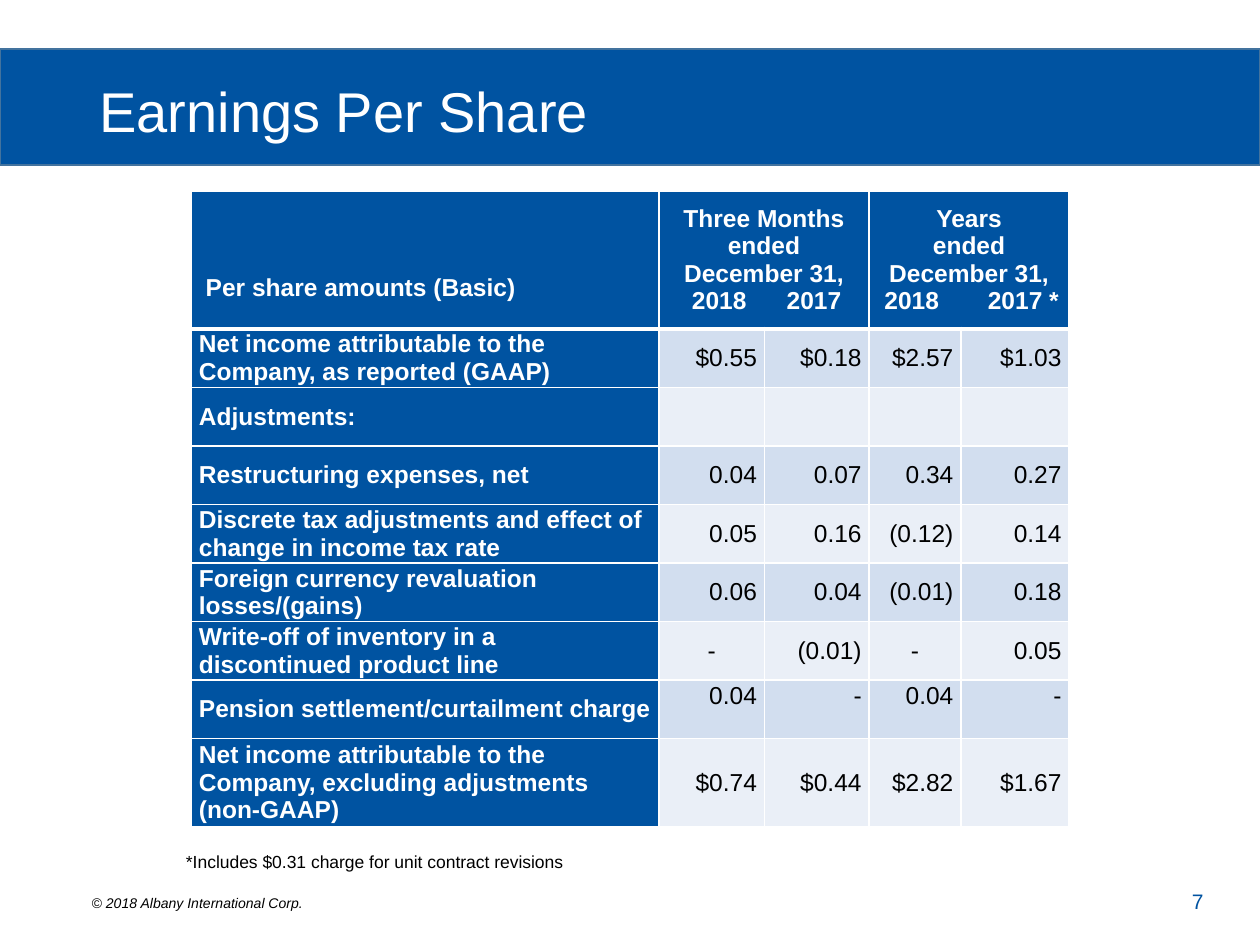
from dataclasses import dataclass

from lxml.etree import SubElement
from pptx import Presentation
from pptx.dml.color import RGBColor
from pptx.enum.shapes import MSO_SHAPE
from pptx.enum.text import MSO_ANCHOR, MSO_AUTO_SIZE, PP_ALIGN
from pptx.oxml import parse_xml
from pptx.oxml.ns import nsdecls, qn
from pptx.util import Cm, Pt


@dataclass(frozen=True)
class Theme:
    font: str = "Arial"
    blue: str = "0053A1"
    bar_line: str = "43739E"
    white: str = "FFFFFF"
    black: str = "000000"
    bands: tuple = ("D2DEEF", "EAEFF7")
    title: int = 32
    table: int = 14
    page: int = 12
    note: int = 10
    copyright: int = 8


class SlideBuilder:
    def __init__(self, slide, theme):
        self.slide, self.theme = slide, theme

    def style(self, p, size, color, bold=False, italic=False, align=PP_ALIGN.LEFT):
        p.alignment = align
        font = p.font
        font.name, font.size = self.theme.font, Pt(size)
        font.bold, font.italic = bold, italic
        font.color.rgb = RGBColor.from_string(color)

    def bar(self, left, top, width, height):
        sp = self.slide.shapes.add_shape(
            MSO_SHAPE.RECTANGLE, Cm(left), Cm(top), Cm(width), Cm(height))
        sp.shadow.inherit = False
        sp.fill.solid()
        sp.fill.fore_color.rgb = RGBColor.from_string(self.theme.blue)
        sp.line.color.rgb = RGBColor.from_string(self.theme.bar_line)
        sp.line.width = Pt(1)
        # Keep the bar behind the title placeholder
        self.slide.shapes._spTree.insert(2, sp._element)

    def title(self, text, left, top, width, height):
        sp = self.slide.shapes.title
        sp.left, sp.top, sp.width, sp.height = Cm(left), Cm(top), Cm(width), Cm(height)
        tf = sp.text_frame
        tf.text = text
        tf.auto_size = MSO_AUTO_SIZE.NONE
        tf.vertical_anchor = MSO_ANCHOR.MIDDLE
        p = tf.paragraphs[0]
        p.line_spacing = 0.9
        self.style(p, self.theme.title, self.theme.white)

    def text(self, text, left, top, width, height, size, color,
             anchor=MSO_ANCHOR.TOP, **style):
        tf = self.slide.shapes.add_textbox(
            Cm(left), Cm(top), Cm(width), Cm(height)).text_frame
        tf.word_wrap = True
        tf.vertical_anchor = anchor
        tf.text = text
        self.style(tf.paragraphs[0], size, color, **style)

    def table(self, left, top, col_widths, row_heights):
        table = self.slide.shapes.add_table(
            len(row_heights), len(col_widths), Cm(left), Cm(top),
            Cm(sum(col_widths)), Cm(sum(row_heights))).table
        for column, width in zip(table.columns, col_widths):
            column.width = Cm(width)
        for row, height in zip(table.rows, row_heights):
            row.height = Cm(height)
        return table

    def cell(self, cell, lines, fill, color, bold=False, align=PP_ALIGN.LEFT,
             anchor=MSO_ANCHOR.MIDDLE, bottom=0, rule=1, tabs=()):
        cell.margin_left = cell.margin_right = Cm(0.15)
        cell.margin_top, cell.margin_bottom = 0, Cm(bottom)
        cell.vertical_anchor = anchor
        cell.fill.solid()
        cell.fill.fore_color.rgb = RGBColor.from_string(fill)
        self.borders(cell, rule)
        tf = cell.text_frame
        tf.text = "\n".join(lines)
        for p, line in zip(tf.paragraphs, lines):
            tabbed = "\t" in line
            if tabbed:
                self.centre_tabs(p, tabs)
            self.style(p, self.theme.table, color, bold,
                       align=PP_ALIGN.LEFT if tabbed else align)

    def centre_tabs(self, p, positions):
        tab_list = SubElement(p._p.get_or_add_pPr(), qn("a:tabLst"))
        for position in positions:
            SubElement(tab_list, qn("a:tab"), pos=str(Cm(position)), algn="ctr")

    def borders(self, cell, bottom):
        tc_pr = cell._tc.get_or_add_tcPr()
        widths = {"lnL": 1, "lnR": 1, "lnT": 1, "lnB": bottom}
        for i, (side, width) in enumerate(widths.items()):
            tc_pr.insert(i, parse_xml(
                f'<a:{side} {nsdecls("a")} w="{Pt(width)}"><a:solidFill>'
                f'<a:srgbClr val="{self.theme.white}"/></a:solidFill></a:{side}>'))


# Period headings: first column, lines, centres of the two years in cm
PERIODS = [
    (1, ["Three Months ended", "December 31,", "\t2018\t2017"], (1.07, 2.98)),
    (3, ["Years", "ended", "December 31,", "\t2018\t2017 *"], (0.71, 2.96)),
]
PENSION = "Pension settlement/curtailment charge"
WRITE_OFF = "Write-off of inventory in a discontinued product line"
ROWS = [
    ("Net income attributable to the Company, as reported (GAAP)",
     "$0.55", "$0.18", "$2.57", "$1.03"),
    ("Adjustments:", "", "", "", ""),
    ("Restructuring expenses, net", "0.04", "0.07", "0.34", "0.27"),
    ("Discrete tax adjustments and effect of change in income tax rate",
     "0.05", "0.16", "(0.12)", "0.14"),
    ("Foreign currency revaluation losses/(gains)",
     "0.06", "0.04", "(0.01)", "0.18"),
    (WRITE_OFF, "-", "(0.01)", "-", "0.05"),
    (PENSION, "0.04", "-", "0.04", "-"),
    ("Net income attributable to the Company, excluding adjustments (non-GAAP)",
     "$0.74", "$0.44", "$2.82", "$1.67"),
]


def earnings_table(s, theme):
    table = s.table(3.86, 3.86, [9.42, 2.13, 2.11, 1.85, 2.18],
                    [2.77] + [1.18] * 7 + [1.78])
    label = dict(fill=theme.blue, color=theme.white, bold=True)

    # Header row
    s.cell(table.cell(0, 0), ["\u00a0Per share amounts (Basic)"], rule=3,
           anchor=MSO_ANCHOR.BOTTOM, bottom=0.55, **label)
    for col, lines, tabs in PERIODS:
        table.cell(0, col).merge(table.cell(0, col + 1))
        s.cell(table.cell(0, col), lines, align=PP_ALIGN.CENTER, rule=3,
               tabs=tabs, **label)
        s.borders(table.cell(0, col + 1), 3)

    # Labels and banded values
    for r, (name, *values) in enumerate(ROWS, start=1):
        s.cell(table.cell(r, 0), [name], **label)
        for c, value in enumerate(values, start=1):
            centred = name == WRITE_OFF and value == "-"
            s.cell(table.cell(r, c), [value], theme.bands[(r - 1) % 2], theme.black,
                   align=PP_ALIGN.CENTER if centred else PP_ALIGN.RIGHT,
                   bottom=0.56 if name == PENSION else 0)


def main():
    prs = Presentation()
    prs.slide_width, prs.slide_height = Cm(25.4), Cm(19.05)
    theme = Theme()
    s = SlideBuilder(prs.slides.add_slide(prs.slide_layouts[5]), theme)

    # Title band
    s.bar(0, 0.99, 25.4, 2.34)
    s.title("Earnings Per Share", 1.75, 0.46, 21.9, 3.68)

    earnings_table(s, theme)

    # Footnote, copyright and page number
    s.text("*Includes $0.31 charge for unit contract revisions",
           3.5, 17.04, 9.88, 1.12, theme.note, theme.black)
    s.text("© 2018 Albany International Corp.",
           1.6, 17.91, 23.04, 0.61, theme.copyright, theme.black, italic=True)
    s.text("7", 17.93, 17.65, 6.58, 1.02, theme.page, theme.blue,
           anchor=MSO_ANCHOR.MIDDLE, align=PP_ALIGN.RIGHT)

    prs.save("out.pptx")


if __name__ == "__main__":
    main()
